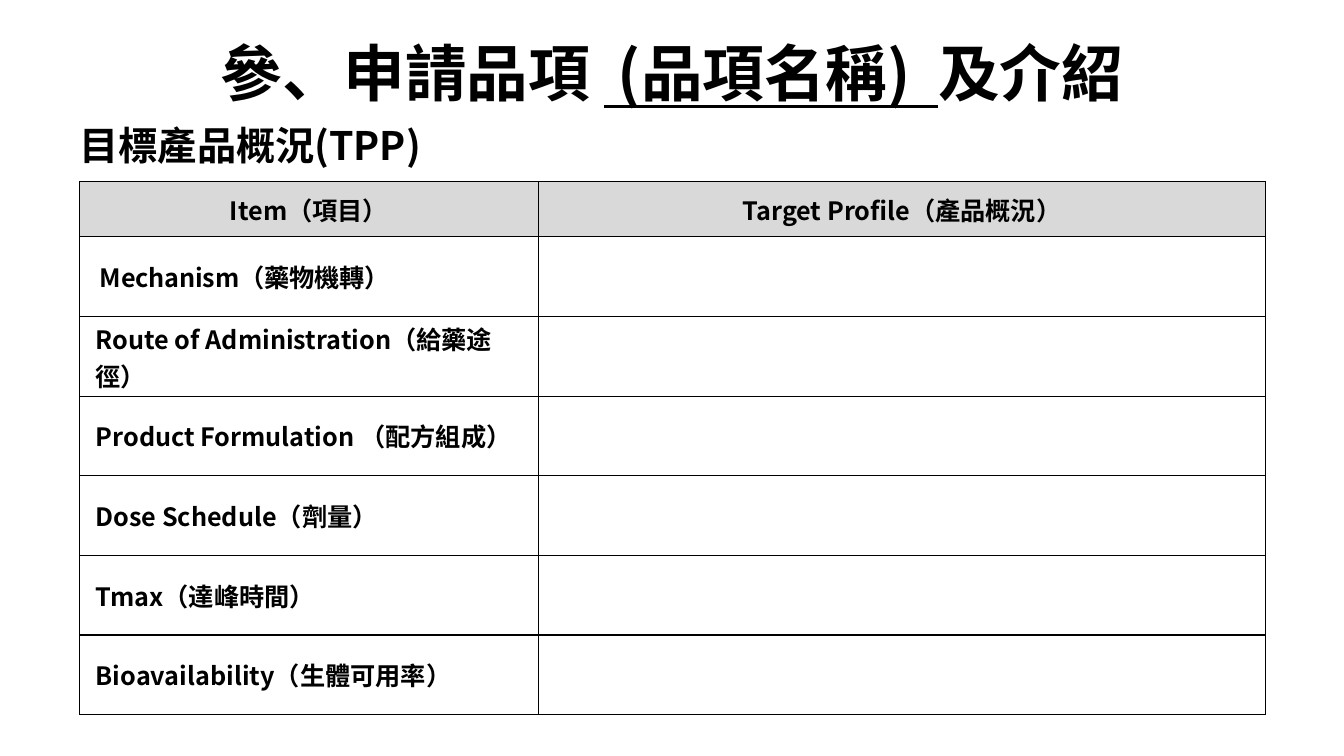
import pptx
import pptx.dml.color
import pptx.enum.text
import pptx.oxml
import pptx.oxml.ns
import pptx.util

Inches = pptx.util.Inches
ALIGN = pptx.enum.text.PP_ALIGN
MIDDLE = pptx.enum.text.MSO_ANCHOR.MIDDLE
FONT = "Noto Sans CJK SC"
BLACK = "000000"
HEADER_GREY = "D9D9D9"
HEADERS = ("Item（項目）", "Target Profile（產品概況）")
ITEMS = (
    "Mechanism（藥物機轉）",
    "Route of Administration（給藥途徑）",
    "Product Formulation （配方組成）",
    "Dose Schedule（劑量）",
    "Tmax（達峰時間）",
    "Bioavailability（生體可用率）",
)


def color(code):
    """Turn a hex string into a colour."""
    return pptx.dml.color.RGBColor.from_string(code)


def add_run(paragraph, wording, size, underline=False, spacing=0):
    """Add one bold black run; spacing is in points."""
    run = paragraph.add_run()
    run.text = wording
    run.font.size = pptx.util.Pt(size)
    run.font.bold = True
    run.font.underline = underline
    run.font.color.rgb = color(BLACK)
    run.font.name = FONT
    properties = run.font._element
    east_asian = pptx.oxml.parse_xml(
        f'<a:ea {pptx.oxml.ns.nsdecls("a")} typeface="{FONT}"/>')
    properties.find(pptx.oxml.ns.qn("a:latin")).addnext(east_asian)
    if spacing:
        properties.set("spc", str(round(spacing * 100)))


def add_heading(slide, box, runs, size, align, spacing=0):
    """Place a one-line heading of (wording, underline) runs in its box."""
    heading = slide.shapes.add_textbox(*map(Inches, box)).text_frame
    heading.word_wrap = True
    heading.margin_left = heading.margin_right = 0
    heading.margin_top = heading.margin_bottom = 0
    line = heading.paragraphs[0]
    line.alignment = align
    for wording, underline in runs:
        add_run(line, wording, size, underline, spacing)


def style_cell(cell, fill=None):
    """Give a cell black borders, its fill and middle anchoring."""
    cell.vertical_anchor = MIDDLE
    properties = cell._tc.get_or_add_tcPr()
    for order, side in enumerate("LRTB"):
        properties.insert(order, pptx.oxml.parse_xml(
            f'<a:ln{side} {pptx.oxml.ns.nsdecls("a")} w="12700"><a:solidFill>'
            f'<a:srgbClr val="{BLACK}"/></a:solidFill></a:ln{side}>'))
    if fill:
        cell.fill.solid()
        cell.fill.fore_color.rgb = color(fill)
    else:
        cell.fill.background()


def add_profile_table(slide, box):
    """Build the target product profile table in its box."""
    left, top, width, height = map(Inches, box)
    profile = slide.shapes.add_table(
        len(ITEMS) + 1, len(HEADERS), left, top, width, height).table
    profile.columns[0].width = Inches(4.55)
    profile.columns[1].width = width - Inches(4.55)
    header_height = Inches(0.55)
    for index, row in enumerate(profile.rows):
        row.height = (height - header_height) // len(ITEMS) if index else header_height
        for cell in row.cells:
            style_cell(cell, None if index else HEADER_GREY)
    for column, header in enumerate(HEADERS):
        line = profile.cell(0, column).text_frame.paragraphs[0]
        line.alignment = ALIGN.CENTER
        add_run(line, header, 18)
    for index, item in enumerate(ITEMS, 1):
        cell = profile.cell(index, 0)
        side, edge = (0.1, 0.05) if index == 1 else (0.06, 0.04)
        cell.margin_left = cell.margin_right = Inches(side)
        cell.margin_top = cell.margin_bottom = Inches(edge)
        line = cell.text_frame.paragraphs[0]
        line._p.get_or_add_pPr().set("marL", str(Inches(0.1)))
        add_run(line, item, 18, spacing=-0.1 if index == 1 else 0)


def main():
    """Build and save the slide."""
    deck = pptx.Presentation()
    deck.slide_width, deck.slide_height = Inches(13.33), Inches(7.5)
    slide = deck.slides.add_slide(deck.slide_layouts[6])
    add_heading(slide, (0.79, 1.2, 5.34, 0.47),
                [("目標產品概況(TPP)", False)], 28, ALIGN.LEFT)
    add_profile_table(slide, (0.79, 1.8, 11.76, 5.29))
    add_heading(slide, (1.8, 0.35, 9.73, 0.75),
                [("參、申請品項 ", False), (" (品項名稱)  ", True), ("及介紹", False)],
                44, ALIGN.CENTER, -0.1)
    deck.save("out.pptx")


if __name__ == "__main__":
    main()
